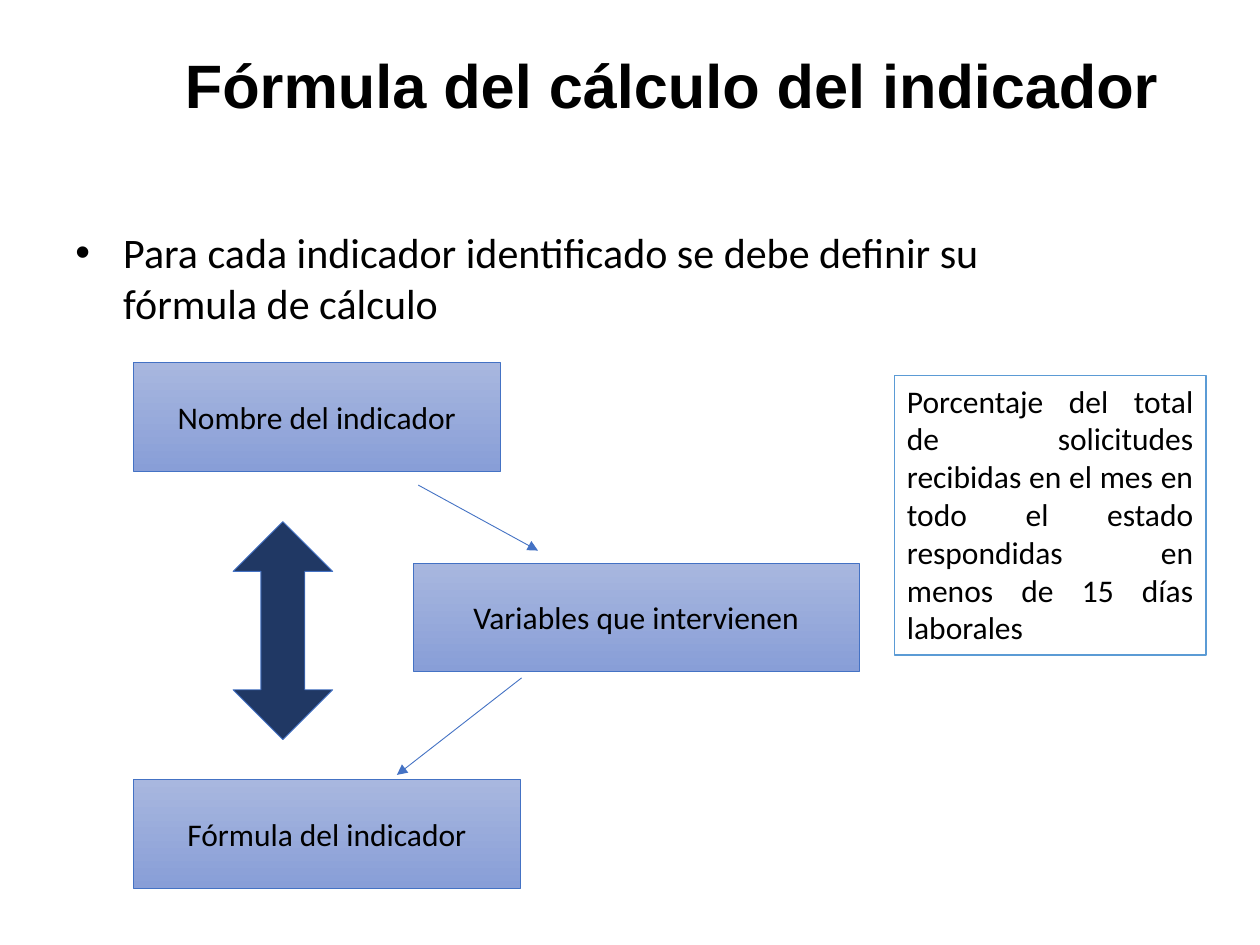
from pptx import Presentation
from pptx.dml.color import RGBColor
from pptx.enum.shapes import MSO_CONNECTOR as CONN, MSO_SHAPE as SHAPE
from pptx.enum.text import MSO_ANCHOR as ANCHOR, PP_ALIGN as ALIGN
from pptx.oxml.ns import qn
from pptx.util import Inches, Pt
from lxml.etree import SubElement

TITLE = "Fórmula del cálculo del indicador"
INTRO = "Para cada indicador identificado se debe definir su fórmula de cálculo"
EXAMPLE = ("Porcentaje del total de solicitudes recibidas en el mes en todo el estado "
           "respondidas en menos de 15 días laborales")
STEPS = [
    ("Nombre del indicador", 1.06, 2.88, 2.91),
    ("Fórmula del indicador", 1.06, 6.19, 3.07),
    ("Variables que intervienen", 3.28, 4.47, 3.54),
]
STEP_HEIGHT = 0.86
ARROWS = [(3.32, 3.85, 4.27, 4.37), (4.14, 5.38, 3.15, 6.15)]
GRADIENT = ["A8B7DF", "889ED7"]
BLUE, NAVY, SKY, WHITE, BLACK = "4472C4", "203864", "5B9BD5", "FFFFFF", "000000"


def rgb(value):
    """Turn a hex string into a colour."""
    return RGBColor.from_string(value)


def set_all(target, values):
    """Set each named attribute on the target."""
    for name, value in values.items():
        setattr(target, name, value)


def write(sp, text, font, frame=None, para=None):
    """Write one formatted paragraph into a shape and return it."""
    tf = sp.text_frame
    set_all(tf, {"word_wrap": True, "vertical_anchor": ANCHOR.TOP, **(frame or {})})
    p = tf.paragraphs[0]
    set_all(p, para or {})
    r = p.add_run()
    r.text = text
    set_all(r.font, {"name": "Calibri", **font})
    r.font.color.rgb = rgb(BLACK)
    return p


def add_text(s, box, *args):
    """Add a text box holding one paragraph."""
    return write(s.shapes.add_textbox(*map(Inches, box)), *args)


def outline(sp, color, width):
    """Give a shape or connector a solid line."""
    sp.line.color.rgb = rgb(color)
    sp.line.width = Pt(width)


def add_shape(s, kind, box, fill, line, width=0.5):
    """Add an outlined shape filled with one colour or a downward gradient."""
    sp = s.shapes.add_shape(kind, *map(Inches, box))
    sp.shadow.inherit = False
    outline(sp, line, width)
    if isinstance(fill, str):
        sp.fill.solid()
        sp.fill.fore_color.rgb = rgb(fill)
    else:
        sp.fill.gradient()
        sp.fill.gradient_angle = 270
        for stop, color in zip(sp.fill.gradient_stops, fill):
            stop.color.rgb = rgb(color)
    return sp


def add_bullet(p, indent):
    """Give a paragraph a hanging round bullet."""
    pPr = p._p.get_or_add_pPr()
    pPr.set("marL", str(Inches(indent)))
    pPr.set("indent", str(Inches(-indent)))
    SubElement(pPr, qn("a:buFont")).set("typeface", "Arial")
    SubElement(pPr, qn("a:buChar")).set("char", "•")


def add_arrow(s, ends):
    """Add a thin straight arrow."""
    cn = s.shapes.add_connector(CONN.STRAIGHT, *map(Inches, ends))
    outline(cn, BLUE, 0.5)
    SubElement(cn.line._get_or_add_ln(), qn("a:tailEnd")).set("type", "triangle")
    SubElement(cn._element.spPr, qn("a:effectLst"))


def main():
    """Build the slide and save it."""
    prs = Presentation()
    set_all(prs, {"slide_width": Inches(10), "slide_height": Inches(7.5)})
    s = prs.slides.add_slide(prs.slide_layouts[6])

    no_margins = {f"margin_{side}": 0 for side in ("left", "top", "right", "bottom")}
    add_text(s, (0.67, 0.44, 9.33, 0.33), TITLE,
             {"name": "Arial", "size": Pt(35), "bold": True}, no_margins,
             {"alignment": ALIGN.CENTER, "line_spacing": 0.9, "space_before": Pt(7.5)})
    intro = add_text(s, (0.5, 1.75, 8.17, 5.33), INTRO, {"size": Pt(24)}, None,
                     {"space_before": Pt(4.8)})
    add_bullet(intro, 0.38)

    for text, left, top, width in STEPS:
        sp = add_shape(s, SHAPE.RECTANGLE, (left, top, width, STEP_HEIGHT), GRADIENT, BLUE)
        write(sp, text, {"size": Pt(18)},
              {"word_wrap": False, "vertical_anchor": ANCHOR.MIDDLE},
              {"alignment": ALIGN.CENTER})

    link = add_shape(s, SHAPE.UP_DOWN_ARROW, (1.85, 4.14, 0.79, 1.73), NAVY, BLUE)
    link.adjustments[0], link.adjustments[1] = 0.5, 0.44
    for ends in ARROWS:
        add_arrow(s, ends)

    example = add_shape(s, SHAPE.RECTANGLE, (7.1, 2.98, 2.47, 2.22), WHITE, SKY, 1)
    write(example, EXAMPLE, {"size": Pt(18)}, None, {"alignment": ALIGN.JUSTIFY})

    prs.save("out.pptx")


if __name__ == "__main__":
    main()
